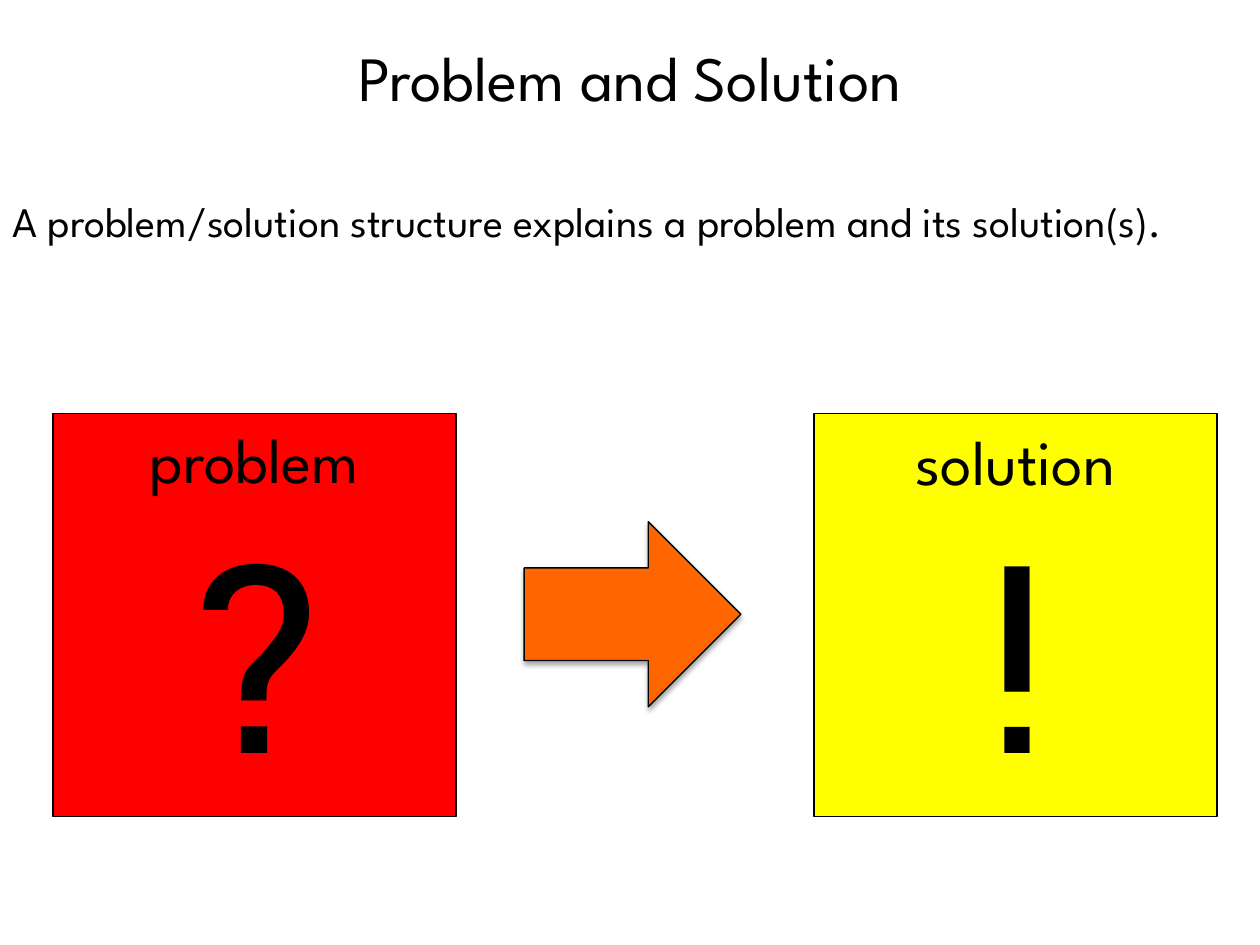
"""Build the Problem and Solution slide."""
from lxml import etree
from pptx import Presentation
from pptx.dml.color import RGBColor
from pptx.enum.shapes import MSO_SHAPE
from pptx.enum.text import PP_ALIGN
from pptx.oxml.ns import qn
from pptx.util import Inches, Pt

CENTER, JUSTIFY = PP_ALIGN.CENTER, PP_ALIGN.JUSTIFY
SQUARE, ARROW = MSO_SHAPE.RECTANGLE, MSO_SHAPE.RIGHT_ARROW
COLORS = {"ink": "000000", "problem": "FF0000", "solution": "FFFF00", "arrow": "FF6600"}

deck = Presentation()
deck.slide_width, deck.slide_height = Inches(10), Inches(7.5)
slide = deck.slides.add_slide(deck.slide_layouts[6])


def add_text(text, left, top, width, height, size=36, font="League Spartan",
             align=CENTER, spacing=None):
    box = slide.shapes.add_textbox(Inches(left), Inches(top), Inches(width), Inches(height))
    box.text_frame.word_wrap = True
    paragraph = box.text_frame.paragraphs[0]
    paragraph.alignment = align
    paragraph.line_spacing = spacing
    run = paragraph.add_run()
    run.text = text
    run.font.size = Pt(size)
    run.font.name = font
    run.font.color.rgb = RGBColor.from_string(COLORS["ink"])


def add_block(kind, color, left, top, width, height):
    block = slide.shapes.add_shape(kind, Inches(left), Inches(top), Inches(width), Inches(height))
    block.shadow.inherit = False
    block.fill.solid()
    block.fill.fore_color.rgb = RGBColor.from_string(COLORS[color])
    block.line.color.rgb = RGBColor.from_string(COLORS["ink"])
    block.line.width = Pt(0.75)
    return block


add_text("Problem and Solution", 0, 0.26, 10, 0.71)
add_text("A problem/solution structure explains a problem and its solution(s).",
         0, 1.3, 10, 1.28, size=24, align=JUSTIFY, spacing=1.5)

arrow = add_block(ARROW, "arrow", 4.16, 4.14, 1.72, 1.47)
effects = arrow.element.spPr.find(qn("a:effectLst"))
shadow = etree.SubElement(effects, qn("a:outerShdw"), blurRad=str(Pt(3.1)), dist=str(Pt(1.8)),
                          dir="5400000", rotWithShape="0")
shade = etree.SubElement(shadow, qn("a:srgbClr"), val=COLORS["ink"])
etree.SubElement(shade, qn("a:alpha"), val="35000")

for label, mark, left, label_top, mark_left in (
    ("problem", "?", 0.42, 3.29, 1.01),
    ("solution", "!", 6.46, 3.3, 7.05),
):
    add_block(SQUARE, label, left, 3.28, 3.2, 3.2)
    add_text(label, left, label_top, 3.2, 0.71)
    add_text(mark, mark_left, 3.85, 2.05, 2.63, size=150, font="Roboto Slab")

deck.save("out.pptx")
